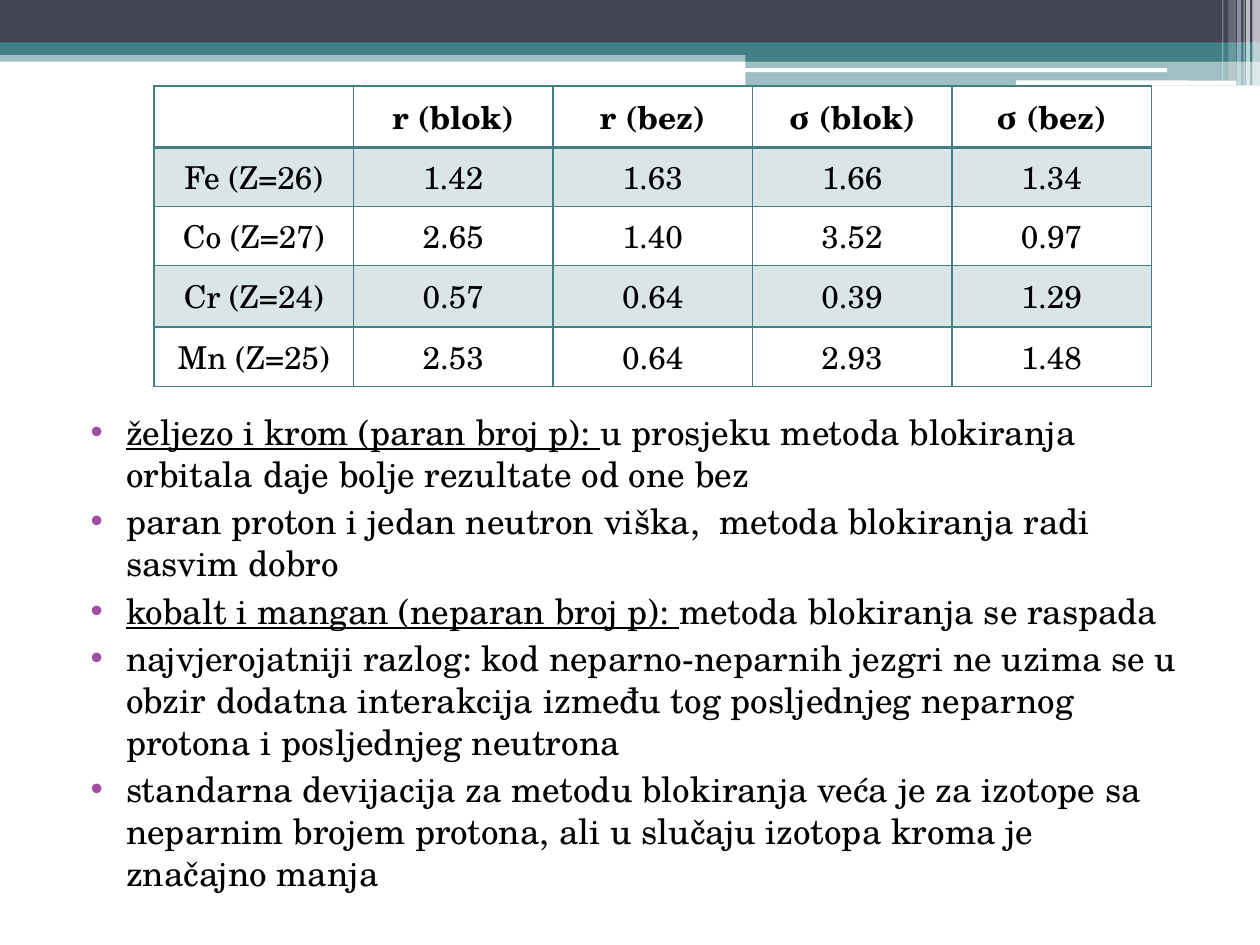
"""Build a slide comparing the orbital blocking method for four elements."""
import pptx
import pptx.util
import pptx.dml.color
import pptx.enum.shapes
import pptx.enum.text
import pptx.oxml
import pptx.oxml.ns

Pt = pptx.util.Pt
RGBColor = pptx.dml.color.RGBColor
SHAPES = pptx.enum.shapes.MSO_SHAPE
qn = pptx.oxml.ns.qn

FONT = "TeX Gyre Schola"
BLACK = RGBColor(0x00, 0x00, 0x00)
WHITE = RGBColor(0xFF, 0xFF, 0xFF)
TEAL = RGBColor(0x43, 0x80, 0x86)
NAVY = RGBColor(0x42, 0x44, 0x56)
PURPLE = RGBColor(0xA0, 0x4D, 0xA3)

TABLE_ROWS = [
    ("", "r (blok)", "r (bez)", "σ (blok)", "σ (bez)"),
    ("Fe (Z=26)", "1.42", "1.63", "1.66", "1.34"),
    ("Co (Z=27)", "2.65", "1.40", "3.52", "0.97"),
    ("Cr (Z=24)", "0.57", "0.64", "0.39", "1.29"),
    ("Mn (Z=25)", "2.53", "0.64", "2.93", "1.48"),
]
ROW_HEIGHTS = [35, 33.8, 33.8, 35.3, 33.8]
COLUMN_WIDTH = 114

BULLETS = [
    ("željezo i krom (paran broj p): ",
     "u prosjeku metoda blokiranja orbitala daje bolje rezultate od one bez"),
    ("", "paran proton i jedan neutron viška,  metoda blokiranja radi sasvim dobro"),
    ("kobalt i mangan (neparan broj p): ", "metoda blokiranja se raspada"),
    ("", "najvjerojatniji razlog: kod neparno-neparnih jezgri ne uzima se u obzir "
         "dodatna interakcija između tog posljednjeg neparnog protona i posljednjeg neutrona"),
    ("", "standarna devijacija za metodu blokiranja veća je za izotope sa neparnim "
         "brojem protona, ali u slučaju izotopa kroma je značajno manja"),
]

BANDS = [
    (SHAPES.RECTANGLE, 0, 28.8, 720, 6.5, TEAL, 50),
    (SHAPES.RECTANGLE, 0, 0, 720, 24.5, NAVY, 100),
    (SHAPES.RECTANGLE, 0, 24.2, 720, 7.2, TEAL, 100),
    (SHAPES.RECTANGLE, 426, 28, 294, 7.2, TEAL, 100),
    (SHAPES.RECTANGLE, 426, 34.8, 294, 14, TEAL, 50),
    (SHAPES.ROUNDED_RECTANGLE, 425.5, 39, 241.5, 2.2, WHITE, 100),
    (SHAPES.ROUNDED_RECTANGLE, 580.5, 46, 126, 2.8, WHITE, 100),
]
STRIPES = [
    (715.7, 4.3, 49, 65), (712.1, 2.2, 49, 65), (710.6, 0.7, 49, 60),
    (707, 2.2, 49, 40), (702, 4.3, 46, 20), (698.4, 0.7, 46, 30),
]


def fill_solid(fill, color, parent, opacity=100):
    fill.solid()
    fill.fore_color.rgb = color
    if opacity < 100:
        color_element = parent.find(qn("a:solidFill"))[0]
        pptx.oxml.ns.qn("a:alpha")
        alpha = color_element.makeelement(qn("a:alpha"), {"val": str(opacity * 1000)})
        color_element.append(alpha)


def add_band(slide, kind, left, top, width, height, color, opacity):
    shape = slide.shapes.add_shape(kind, Pt(left), Pt(top), Pt(width), Pt(height))
    shape.shadow.inherit = False
    shape.line.fill.background()
    fill_solid(shape.fill, color, shape.element.spPr, opacity)


def add_borders(cell, top, bottom):
    properties = cell._tc.get_or_add_tcPr()
    for side, width in (("L", 1), ("R", 1), ("T", top), ("B", bottom)):
        properties.append(pptx.oxml.parse_xml(
            f'<a:ln{side} xmlns:a="http://schemas.openxmlformats.org/drawingml/2006/main" '
            f'w="{Pt(width)}"><a:solidFill><a:srgbClr val="{TEAL}"/></a:solidFill></a:ln{side}>'))


def style_font(font, size, bold=False):
    font.name, font.size, font.bold = FONT, Pt(size), bold
    font.color.rgb = BLACK


def add_results_table(slide):
    columns = len(TABLE_ROWS[0])
    table = slide.shapes.add_table(len(TABLE_ROWS), columns, Pt(88), Pt(49),
                                   Pt(COLUMN_WIDTH * columns), Pt(sum(ROW_HEIGHTS))).table
    table.horz_banding = False
    table.first_row = False
    for column in table.columns:
        column.width = Pt(COLUMN_WIDTH)
    for row_index, values in enumerate(TABLE_ROWS):
        table.rows[row_index].height = Pt(ROW_HEIGHTS[row_index])
        for column_index, value in enumerate(values):
            cell = table.cell(row_index, column_index)
            cell.text = value
            cell.vertical_anchor = pptx.enum.text.MSO_ANCHOR.MIDDLE
            add_borders(cell, 2 if row_index == 1 else 1, 2 if row_index == 0 else 1)
            if row_index % 2:
                fill_solid(cell.fill, TEAL, cell._tc.tcPr, 20)
            else:
                cell.fill.background()
            paragraph = cell.text_frame.paragraphs[0]
            paragraph.alignment = pptx.enum.text.PP_ALIGN.CENTER
            style_font(paragraph.font, 18, bold=row_index == 0)


def add_bullet(paragraph):
    properties = paragraph._p.get_or_add_pPr()
    properties.set("marL", str(Pt(28.8)))
    properties.set("indent", str(Pt(-20.2)))
    paragraph.space_before = Pt(3)
    namespace = 'xmlns:a="http://schemas.openxmlformats.org/drawingml/2006/main"'
    for xml in (f'<a:buClr {namespace}><a:srgbClr val="{PURPLE}"/></a:buClr>',
                f'<a:buChar {namespace} char="•"/>'):
        properties.append(pptx.oxml.parse_xml(xml))


def fill_body(body):
    body.left, body.top, body.width, body.height = Pt(36), Pt(231), Pt(648), Pt(286)
    frame = body.text_frame
    frame.word_wrap = True
    frame.auto_size = pptx.enum.text.MSO_AUTO_SIZE.NONE
    for index, (lead, text) in enumerate(BULLETS):
        paragraph = frame.add_paragraph() if index else frame.paragraphs[0]
        add_bullet(paragraph)
        style_font(paragraph.font, 20)
        if lead:
            run = paragraph.add_run()
            run.text = lead
            run.font.underline = True
        paragraph.add_run().text = text


def main():
    presentation = pptx.Presentation()
    presentation.slide_width, presentation.slide_height = Pt(720), Pt(540)
    slide = presentation.slides.add_slide(presentation.slide_layouts[1])
    title, body = slide.placeholders
    title.element.getparent().remove(title.element)
    for band in BANDS:
        add_band(slide, *band)
    for left, width, height, opacity in STRIPES:
        add_band(slide, SHAPES.RECTANGLE, left, 0, width, height, WHITE, opacity)
    fill_body(body)
    add_results_table(slide)
    presentation.save("out.pptx")


if __name__ == "__main__":
    main()
